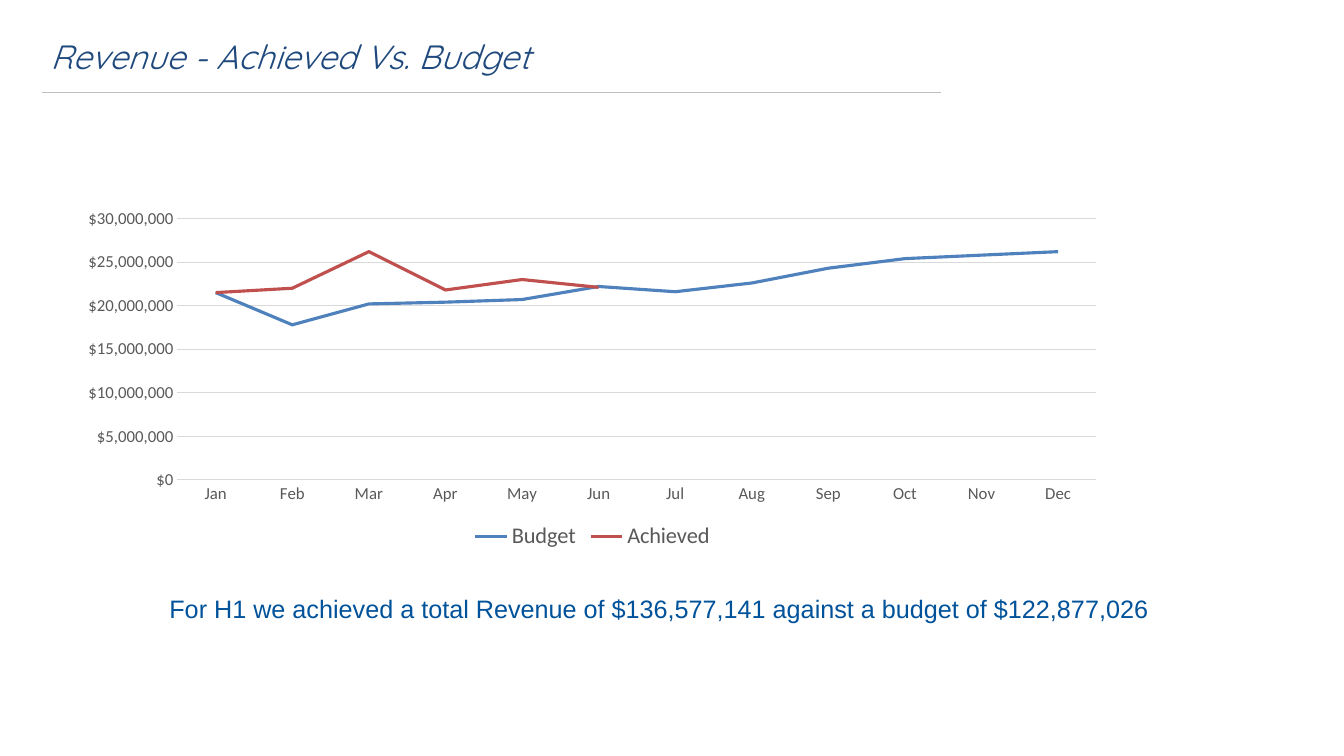
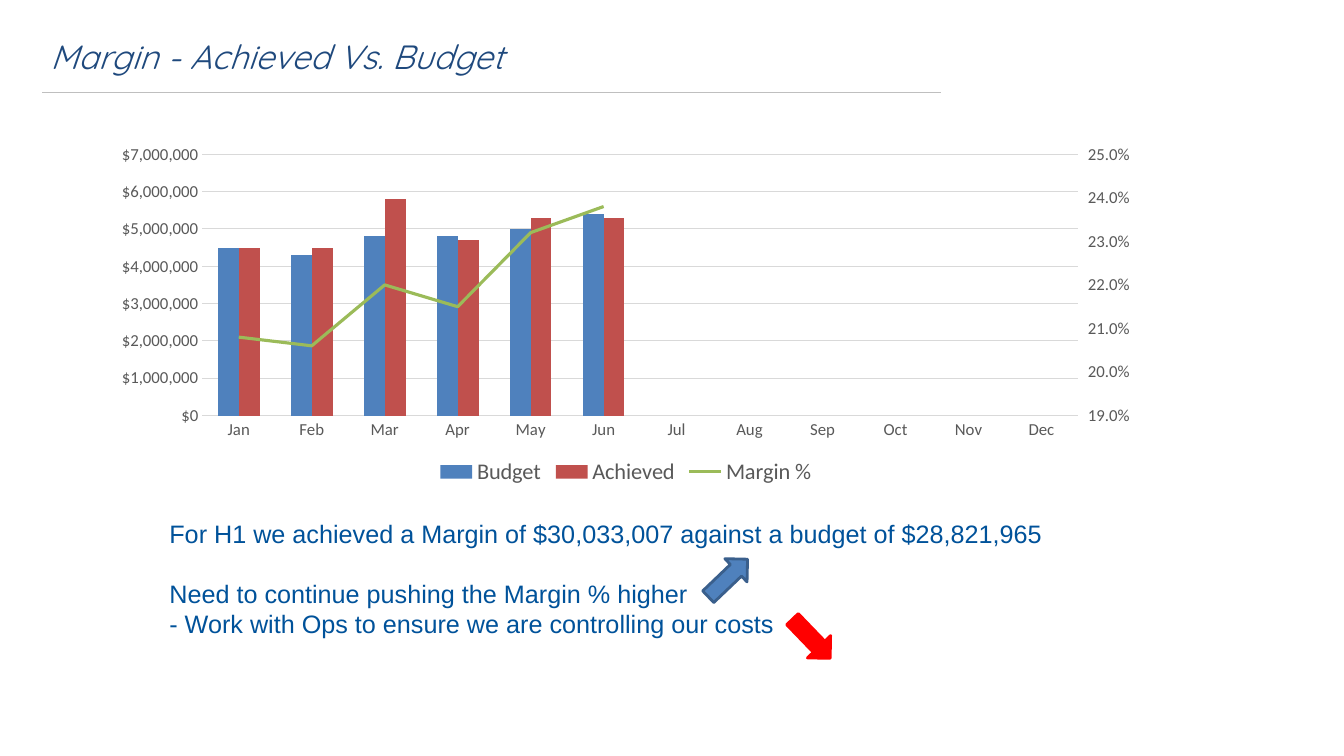
from lxml.etree import SubElement
from pptx import Presentation
from pptx.chart.axis import ValueAxis
from pptx.chart.data import CategoryChartData
from pptx.dml.color import RGBColor
from pptx.enum.chart import XL_CHART_TYPE, XL_LEGEND_POSITION, XL_MARKER_STYLE, XL_TICK_MARK
from pptx.enum.shapes import MSO_CONNECTOR, MSO_SHAPE
from pptx.enum.text import MSO_ANCHOR, MSO_AUTO_SIZE, PP_ALIGN
from pptx.oxml import parse_xml
from pptx.oxml.ns import nsdecls, qn
from pptx.util import Cm, Pt

NAVY = RGBColor(0x1F, 0x49, 0x7D)
TEXT_BLUE = RGBColor(0x00, 0x52, 0x9A)
RULE_GREY = RGBColor(0xBF, 0xBF, 0xBF)
GRID_GREY = RGBColor(0xD9, 0xD9, 0xD9)
LABEL_GREY = RGBColor(0x59, 0x59, 0x59)
BLACK = RGBColor(0x00, 0x00, 0x00)
BLUE = RGBColor(0x4F, 0x81, 0xBD)
DARK_BLUE = RGBColor(0x3A, 0x5F, 0x8C)
BRICK = RGBColor(0xC0, 0x50, 0x4D)
GREEN = RGBColor(0x9B, 0xBB, 0x59)
RED = RGBColor(0xFF, 0x00, 0x00)

MONTHS = "Jan Feb Mar Apr May Jun Jul Aug Sep Oct Nov Dec".split()
DOLLARS = '"$"#,##0'
PERCENT = "0.0%"

LINE_GROUP = f"""<c:lineChart {nsdecls("c")}>
<c:grouping val="standard"/><c:varyColors val="0"/>
<c:marker val="1"/><c:axId val="5001"/><c:axId val="5002"/></c:lineChart>"""
HIDDEN_CATEGORY_AXIS = f"""<c:catAx {nsdecls("c")}><c:axId val="5001"/>
<c:scaling><c:orientation val="minMax"/></c:scaling><c:delete val="1"/>
<c:axPos val="b"/><c:crossAx val="5002"/><c:crosses val="autoZero"/></c:catAx>"""
RIGHT_AXIS = f"""<c:valAx {nsdecls("c")}><c:axId val="5002"/>
<c:scaling><c:orientation val="minMax"/></c:scaling><c:delete val="0"/>
<c:axPos val="r"/><c:numFmt formatCode="{PERCENT}" sourceLinked="0"/>
<c:majorTickMark val="out"/><c:minorTickMark val="none"/><c:tickLblPos val="nextTo"/>
<c:crossAx val="5001"/><c:crosses val="max"/></c:valAx>"""


def style_font(font, name, size, color):
    font.name = name
    font.size = Pt(size)
    font.color.rgb = color


def style_axis(axis, tick=XL_TICK_MARK.NONE, line=None):
    axis.major_tick_mark = tick
    style_font(axis.tick_labels.font, "Calibri", 12, LABEL_GREY)
    if line is None:
        axis.format.line.fill.background()
    else:
        axis.format.line.color.rgb = line
        axis.format.line.width = Pt(0.75)


def scale_axis(axis, minimum, maximum, step):
    axis.minimum_scale = minimum
    axis.maximum_scale = maximum
    axis.major_unit = step


class Deck:
    def __init__(self):
        self.presentation = Presentation()
        self.presentation.slide_width = Cm(33.87)
        self.presentation.slide_height = Cm(19.05)
        self.slide = None

    def add_slide(self, title):
        self.slide = self.presentation.slides.add_slide(self.presentation.slide_layouts[5])
        shape = self.slide.shapes.title
        shape.left, shape.top, shape.width, shape.height = Cm(1.27), Cm(0.85), Cm(20.32), Cm(1.06)
        frame = shape.text_frame
        frame.margin_left = frame.margin_top = frame.margin_right = frame.margin_bottom = 0
        frame.vertical_anchor = MSO_ANCHOR.BOTTOM
        frame.auto_size = MSO_AUTO_SIZE.NONE
        paragraph = frame.paragraphs[0]
        paragraph.alignment = PP_ALIGN.LEFT
        run = paragraph.add_run()
        run.text = title
        run.font.italic = True
        style_font(run.font, "Quicksand", 24, NAVY)
        self.add_rule()

    def add_rule(self):
        rule = self.slide.shapes.add_connector(
            MSO_CONNECTOR.STRAIGHT, Cm(1.06), Cm(2.33), Cm(23.71), Cm(2.33))
        rule.line.color.rgb = RULE_GREY
        rule.line.width = Pt(0.75)
        SubElement(rule._element.spPr, qn("a:effectLst"))

    def add_text(self, left, top, width, height, lines):
        box = self.slide.shapes.add_textbox(Cm(left), Cm(top), Cm(width), Cm(height))
        frame = box.text_frame
        frame.word_wrap = True
        for index, (text, space_before) in enumerate(lines):
            paragraph = frame.add_paragraph() if index else frame.paragraphs[0]
            if space_before:
                paragraph.space_before = Pt(space_before)
            run = paragraph.add_run()
            run.text = text
            style_font(run.font, "Arial", 18, TEXT_BLUE)

    def add_chart(self, kind, left, top, series_values, scale):
        data = CategoryChartData(number_format=DOLLARS)
        data.categories = MONTHS
        for name, values, number_format in series_values:
            padding = [None] * (len(MONTHS) - len(values))
            data.add_series(name, values + padding, number_format)
        chart = self.slide.shapes.add_chart(
            kind, Cm(left), Cm(top), Cm(26.46), Cm(8.89), data).chart
        style_font(chart.font, "Calibri", 10, BLACK)
        chart.has_title = False
        chart.has_legend = True
        chart.legend.position = XL_LEGEND_POSITION.BOTTOM
        chart.legend.include_in_layout = False
        style_font(chart.legend.font, "Calibri", 16, LABEL_GREY)
        style_axis(chart.category_axis, line=GRID_GREY)
        axis = chart.value_axis
        style_axis(axis)
        axis.tick_labels.number_format = DOLLARS
        axis.tick_labels.number_format_is_linked = False
        axis.has_major_gridlines = True
        axis.major_gridlines.format.line.color.rgb = GRID_GREY
        axis.major_gridlines.format.line.width = Pt(0.75)
        scale_axis(axis, *scale)
        chart.plots[0].vary_by_categories = False
        return chart

    def move_last_series_to_right_axis(self, chart, scale):
        bars = chart.plots[0]._element
        series = bars.findall(qn("c:ser"))[-1]
        for bar_setting in series.findall(qn("c:invertIfNegative")):
            series.remove(bar_setting)
        lines = parse_xml(LINE_GROUP)
        lines.find(qn("c:marker")).addprevious(series)
        bars.addnext(lines)
        right_axis = parse_xml(RIGHT_AXIS)
        chart.value_axis._element.addnext(right_axis)
        right_axis.addprevious(parse_xml(HIDDEN_CATEGORY_AXIS))
        axis = ValueAxis(right_axis)
        style_axis(axis, XL_TICK_MARK.OUTSIDE)
        scale_axis(axis, *scale)

    def color_lines(self, plot, colors):
        for series, color in zip(plot.series, colors):
            series.smooth = False
            series.marker.style = XL_MARKER_STYLE.NONE
            series.format.line.color.rgb = color
            series.format.line.width = Pt(2.25)

    def color_bars(self, plot, colors):
        plot.gap_width = 150
        plot.overlap = 0
        for series, color in zip(plot.series, colors):
            series.invert_if_negative = False
            series.format.fill.solid()
            series.format.fill.fore_color.rgb = color

    def add_arrow(self, left, top, rotation, fill, line):
        shape = self.slide.shapes.add_shape(
            MSO_SHAPE.UP_ARROW, Cm(left), Cm(top), Cm(0.81), Cm(1.37))
        shape.rotation = rotation
        shape.shadow.inherit = False
        shape.fill.solid()
        shape.fill.fore_color.rgb = fill
        shape.line.color.rgb = line
        shape.line.width = Pt(2)


def add_revenue_slide(deck):
    deck.add_slide("Revenue - Achieved Vs. Budget")
    budget = [21500000, 17800000, 20200000, 20400000, 20700000, 22200000,
              21600000, 22600000, 24300000, 25400000, 25800000, 26200000]
    achieved = [21500000, 22000000, 26200000, 21800000, 23000000, 22100000]
    chart = deck.add_chart(
        XL_CHART_TYPE.LINE, 1.7, 5.08,
        [("Budget", budget, DOLLARS), ("Achieved", achieved, DOLLARS)],
        (0, 30000000, 5000000))
    deck.color_lines(chart.plots[0], [BLUE, BRICK])
    deck.add_text(4.02, 14.82, 27.09, 2.48, [
        ("For H1 we achieved a total Revenue of $136,577,141 against a budget of $122,877,026", 0)])


def add_margin_slide(deck):
    deck.add_slide("Margin - Achieved Vs. Budget")
    budget = [4500000, 4300000, 4800000, 4800000, 5000000, 5400000]
    achieved = [4500000, 4500000, 5800000, 4700000, 5300000, 5300000]
    margin = [0.208, 0.206, 0.22, 0.215, 0.232, 0.238]
    chart = deck.add_chart(
        XL_CHART_TYPE.COLUMN_CLUSTERED, 2.54, 3.46,
        [("Budget", budget, DOLLARS), ("Achieved", achieved, DOLLARS),
         ("Margin %", margin, PERCENT)],
        (0, 7000000, 1000000))
    deck.move_last_series_to_right_axis(chart, (0.19, 0.25, 0.01))
    deck.color_bars(chart.plots[0], [BLUE, BRICK])
    deck.color_lines(chart.plots[1], [GREEN])
    deck.add_text(4.02, 12.93, 24.56, 4.77, [
        ("For H1 we achieved a Margin of $30,033,007 against a budget of $28,821,965", 0),
        ("Need to continue pushing the Margin % higher", 21.5),
        ("- Work with Ops to ensure we are controlling our costs", 0)])
    deck.add_arrow(17.94, 13.88, 46.3, BLUE, DARK_BLUE)
    deck.add_arrow(20.04, 15.41, 136.1, RED, RED)


def main():
    deck = Deck()
    add_revenue_slide(deck)
    add_margin_slide(deck)
    deck.presentation.save("out.pptx")


if __name__ == "__main__":
    main()
